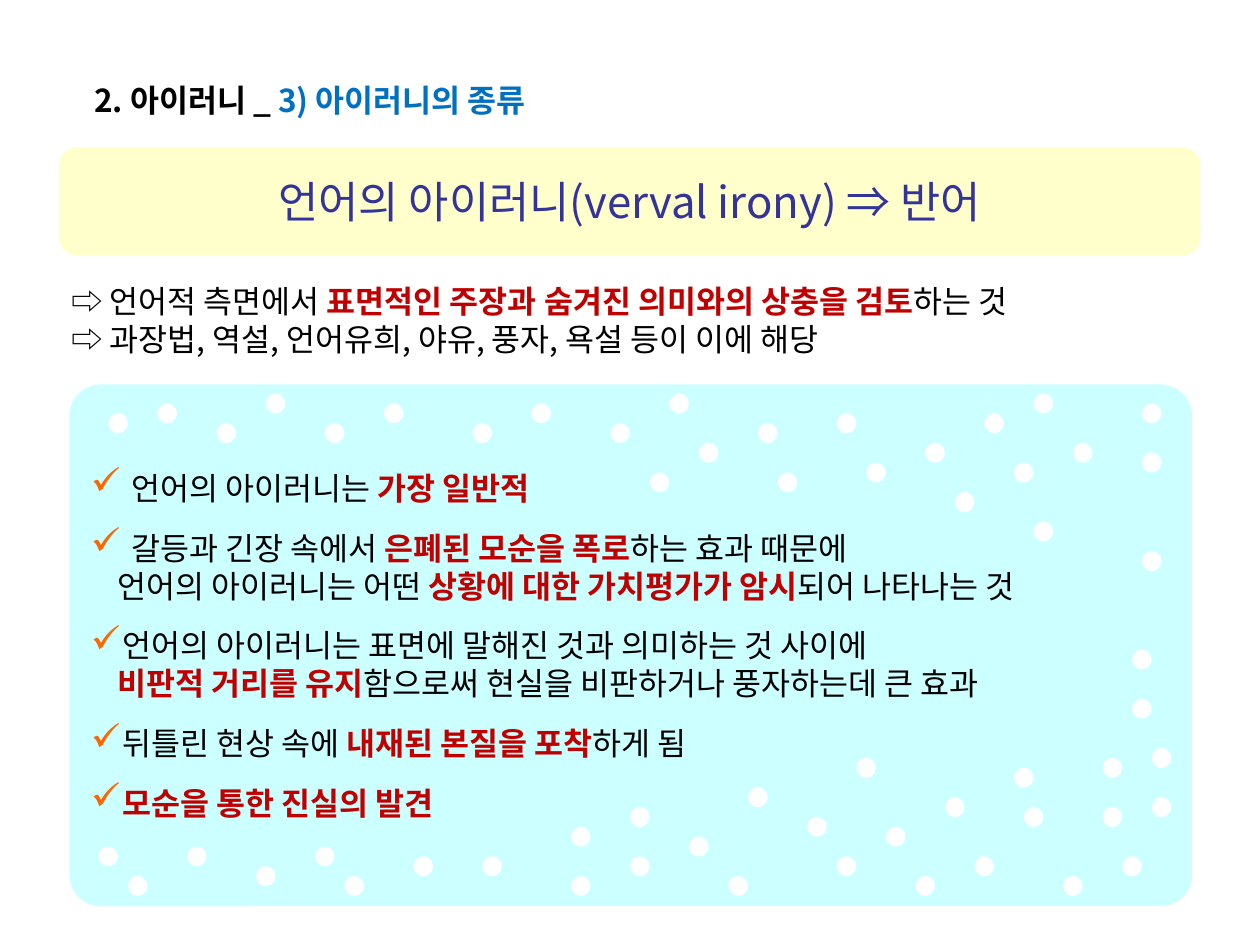
"""Build a slide on verbal irony with a title band and a dotted panel."""
import pptx
import pptx.dml.color
import pptx.enum.shapes
import pptx.enum.text
import pptx.oxml.ns
import pptx.util
from lxml import etree

Cm = pptx.util.Cm
Pt = pptx.util.Pt
qn = pptx.oxml.ns.qn
KIND = pptx.enum.shapes.MSO_SHAPE
FACE = "Noto Sans CJK KR"


def tint(code):
    return pptx.dml.color.RGBColor.from_string(code)


def write(shape, lines, size=18, ink="000000", hue="C00000"):
    """Write lines of text; the parts between asterisks are bold and in hue."""
    frame = shape.text_frame
    frame.word_wrap = True
    for num, line in enumerate(lines):
        para = frame.paragraphs[0] if num == 0 else frame.add_paragraph()
        para.alignment = pptx.enum.text.PP_ALIGN.LEFT
        para.line_spacing = Pt(size * 1.2)
        para.font.size = Pt(size)
        para.font.name = FACE
        etree.SubElement(para.font._element, qn("a:ea"), typeface=FACE)
        for part, text in enumerate(line.split("*")):
            if text:
                run = para.add_run()
                run.text = text
                run.font.color.rgb = tint(hue if part % 2 else ink)
                if part % 2:
                    run.font.bold = True
    return frame


deck = pptx.Presentation()
deck.slide_width, deck.slide_height = Cm(25.4), Cm(19.05)
slide = deck.slides.add_slide(deck.slide_layouts[6])
shapes = slide.shapes

head = shapes.add_textbox(Cm(1.65), Cm(1.5), Cm(12.45), Cm(1.02))
frame = write(head, ["2. 아이러니 _* 3) 아이러니의 종류"], hue="0070C0")
frame.paragraphs[0].font.bold = True

band = shapes.add_shape(KIND.ROUNDED_RECTANGLE, Cm(1.19), Cm(2.97), Cm(23.01), Cm(2.18))
frame = write(band, ["언어의 아이러니(verval irony) ⇒ 반어"], size=25, ink="333399")
frame.paragraphs[0].alignment = pptx.enum.text.PP_ALIGN.CENTER

lead = shapes.add_textbox(Cm(1.19), Cm(5.56), Cm(22.63), Cm(1.8))
write(lead, [
    "⇨ 언어적 측면에서 *표면적인 주장과 숨겨진 의미와의 상충을 검토*하는 것",
    "⇨ 과장법, 역설, 언어유희, 야유, 풍자, 욕설 등이 이에 해당",
])

panel = shapes.add_shape(KIND.ROUNDED_RECTANGLE, Cm(1.4), Cm(7.75), Cm(22.63), Cm(10.52))
panel.adjustments[0] = 0.06
points = [
    ("✓", 0.81, "언어의 아이러니는 *가장 일반적"),
    ("✓", 0.81, "갈등과 긴장 속에서 *은폐된 모순을 폭로*하는 효과 때문에"),
    ("", 0.53, "언어의 아이러니는 어떤 *상황에 대한 가치평가가 암시*되어 나타나는 것"),
    ("✓", 0.63, "언어의 아이러니는 표면에 말해진 것과 의미하는 것 사이에"),
    ("", 0.53, "*비판적 거리를 유지*함으로써 현실을 비판하거나 풍자하는데 큰 효과"),
    ("✓", 0.63, "뒤틀린 현상 속에 *내재된 본질을 포착*하게 됨"),
    ("✓", 0.63, "*모순을 통한 진실의 발견"),
]
frame = write(panel, [text for mark, left, text in points])
for num, (mark, left, text) in enumerate(points):
    para = frame.paragraphs[num]
    if mark and num:
        para.space_before = Pt(12.6)
    props = para._p.get_or_add_pPr()
    props.set("marL", str(Cm(left)))
    props.set("indent", str(-Cm(left) if mark else 0))
    if mark:
        color = etree.Element(qn("a:buClr"))
        etree.SubElement(color, qn("a:srgbClr"), val="FF6600")
        scale = etree.Element(qn("a:buSzPct"), val="120000")
        sign = etree.Element(qn("a:buChar"), char=mark)
        for item in (color, scale, sign):
            props.find(qn("a:defRPr")).addprevious(item)

for shape, code in ((band, "FFFFCC"), (panel, "CCFFFF")):
    shape.shadow.inherit = False
    shape.fill.solid()
    shape.fill.fore_color.rgb = tint(code)
    shape.line.fill.background()
    shape.text_frame.vertical_anchor = pptx.enum.text.MSO_ANCHOR.MIDDLE

unit = Cm(25.4) / 128
dots = {
    40: (27, 68, 105), 41: (16, 39, 54, 116), 42: (11, 85, 100),
    43: (22, 33, 48, 62, 77), 45: (71, 94, 109), 46: (116,),
    47: (88, 103), 48: (66, 79), 50: (97,), 53: (105,), 56: (116,),
    66: (115,), 71: (115,), 76: (117,), 77: (87, 112), 78: (103,),
    80: (76,), 81: (96, 117), 82: (64, 104, 112), 83: (82,),
    84: (58, 90), 85: (70,), 86: (10, 19, 32),
    87: (42, 49, 64, 85, 99, 114), 88: (26,),
    89: (13, 35, 58, 74, 93, 108),
}
for row, cols in dots.items():
    for col in cols:
        place = [int(unit * step) for step in (col, row, 2, 2)]
        dot = shapes.add_shape(KIND.OVAL, *place)
        dot.shadow.inherit = False
        dot.fill.solid()
        dot.fill.fore_color.rgb = tint("FFFFFF")
        dot.line.fill.background()

deck.save("out.pptx")
